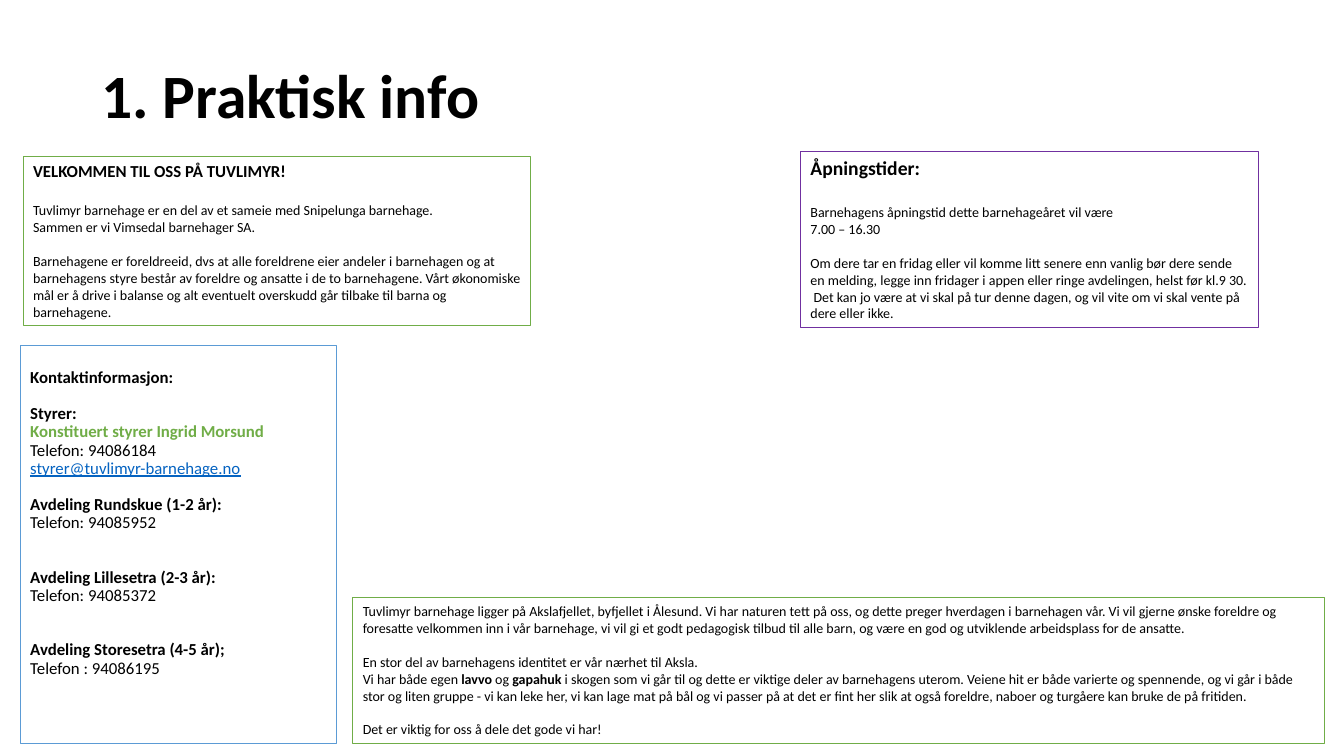
"""Build the practical information slide for a kindergarten."""
from dataclasses import dataclass

from pptx import Presentation
from pptx import util as u
from pptx.dml.color import RGBColor
from pptx.enum import text

COLORS = {
    "black": "000000",
    "white": "FFFFFF",
    "green": "70AD47",
    "blue": "5B9BD5",
    "purple": "7030A0",
    "link": "0563C1",
}
FONT = "Calibri"


@dataclass(frozen=True)
class Run:
    """A stretch of text in one format."""
    text: str
    size: float = 10
    bold: bool = False
    color: str = "black"
    underline: bool = False


@dataclass(frozen=True)
class Para:
    """Runs on one paragraph, with the gap above it in points."""
    runs: tuple[Run, ...]
    before: float = 0


@dataclass(frozen=True)
class Panel:
    """An outlined area of text, with lengths in inches."""
    left: float
    top: float
    width: float
    height: float
    line: str
    paras: tuple[Para, ...]
    spacing: float = 1.0
    inset_top: float = 0.05


def plain(words: str, before: float = 0) -> Para:
    """Return a paragraph of small body text."""
    return Para((Run(words),), before)


def heading(words: str, before: float = 0, size: float = 12, color: str = "black") -> Para:
    """Return a bold paragraph."""
    return Para((Run(words, size, True, color),), before)


def contact(words: str, color: str = "black", underline: bool = False) -> Para:
    """Return one line of contact details."""
    return Para((Run(words, 12, False, color, underline),))


def department(name: str, phone: str, before: float) -> tuple[Para, Para]:
    """Return the heading and phone line of a department."""
    return heading(name, before), contact(phone)


TITLE = Panel(-0.1, 0.22, 6.1, 1.14, "white",
              (heading("1. Praktisk info ", size=44),), 0.9)

CONTACTS = Panel(0.2, 3.43, 3.14, 3.95, "blue", (
    heading("Kontaktinformasjon:"),
    heading("Styrer:", 13),
    heading("Konstituert styrer Ingrid Morsund", color="green"),
    contact("Telefon: 94086184"),
    contact("styrer@tuvlimyr-barnehage.no", "link", True),
    *department("Avdeling Rundskue (1-2 år):", "Telefon: 94085952", 13),
    *department("Avdeling Lillesetra (2-3 år):", "Telefon: 94085372", 26),
    *department("Avdeling Storesetra (4-5 år);", "Telefon : 94086195", 26),
), 0.9, 0.23)

WELCOME = Panel(0.23, 1.55, 5.03, 1.68, "green", (
    heading("VELKOMMEN TIL OSS PÅ TUVLIMYR!"),
    plain("Tuvlimyr barnehage er en del av et sameie med Snipelunga barnehage.", 14.6),
    plain("Sammen er vi Vimsedal barnehager SA."),
    plain("Barnehagene er foreldreeid, dvs at alle foreldrene eier andeler i barnehagen "
          "og at barnehagens styre består av foreldre og ansatte i de to barnehagene. "
          "Vårt økonomiske mål er å drive i balanse og alt eventuelt overskudd går "
          "tilbake til barna og barnehagene.", 12.2),
))

HOURS = Panel(7.94, 1.5, 4.54, 1.75, "purple", (
    heading("Åpningstider:", size=14),
    plain("Barnehagens åpningstid dette barnehageåret vil være", 17.1),
    plain("7.00 – 16.30"),
    plain("Om dere tar en fridag eller vil komme litt senere enn vanlig bør dere sende "
          "en melding, legge inn fridager i appen eller ringe avdelingen, helst før "
          "kl.9 30.  Det kan jo være at vi skal på tur denne dagen, og vil vite om vi "
          "skal vente på dere eller ikke.", 12.2),
))

ABOUT = Panel(3.5, 5.93, 9.64, 1.45, "green", (
    plain("Tuvlimyr barnehage ligger på Akslafjellet, byfjellet i Ålesund. Vi har naturen "
          "tett på oss, og dette preger hverdagen i barnehagen vår. Vi vil gjerne ønske "
          "foreldre og foresatte velkommen inn i vår barnehage, vi vil gi et godt "
          "pedagogisk tilbud til alle barn, og være en god og utviklende arbeidsplass "
          "for de ansatte."),
    plain("En stor del av barnehagens identitet er vår nærhet til Aksla.", 12.2),
    Para((
        Run("Vi har både egen "),
        Run("lavvo", bold=True),
        Run(" og "),
        Run("gapahuk", bold=True),
        Run(" i skogen som vi går til og dette er viktige deler av barnehagens uterom. "
            "Veiene hit er både varierte og spennende, og vi går i både stor og liten "
            "gruppe - vi kan leke her, vi kan lage mat på bål og vi passer på at det er "
            "fint her slik at også foreldre, naboer og turgåere kan bruke de på fritiden."),
    )),
    plain("Det er viktig for oss å dele det gode vi har!", 12.2),
))


def rgb(name: str) -> RGBColor:
    """Return the named colour."""
    return RGBColor.from_string(COLORS[name])


def fill_panel(sp, panel: Panel, align=text.PP_ALIGN.LEFT, anchor=text.MSO_ANCHOR.TOP,
               auto_size=text.MSO_AUTO_SIZE.NONE) -> None:
    """Place, outline and fill a text shape."""
    sp.left, sp.top = u.Inches(panel.left), u.Inches(panel.top)
    sp.width, sp.height = u.Inches(panel.width), u.Inches(panel.height)
    sp.line.color.rgb = rgb(panel.line)
    sp.line.width = u.Pt(0.75)
    tf = sp.text_frame
    tf.word_wrap = True
    tf.auto_size = auto_size
    tf.vertical_anchor = anchor
    tf.margin_left = tf.margin_right = u.Inches(0.1)
    tf.margin_top, tf.margin_bottom = u.Inches(panel.inset_top), u.Inches(0.05)
    for i, para in enumerate(panel.paras):
        p = tf.add_paragraph() if i else tf.paragraphs[0]
        p.alignment = align
        p.line_spacing = panel.spacing
        p.space_before, p.space_after = u.Pt(para.before), u.Pt(0)
        for run in para.runs:
            r = p.add_run()
            r.text = run.text
            r.font.name, r.font.size = FONT, u.Pt(run.size)
            r.font.bold, r.font.underline = run.bold, run.underline
            r.font.color.rgb = rgb(run.color)


def main() -> None:
    """Build and save the slide."""
    prs = Presentation()
    prs.slide_width, prs.slide_height = u.Inches(13.33), u.Inches(7.5)
    s = prs.slides.add_slide(prs.slide_layouts[0])
    fill_panel(s.shapes.title, TITLE, text.PP_ALIGN.CENTER, text.MSO_ANCHOR.BOTTOM)
    fill_panel(s.placeholders[1], CONTACTS)
    for panel in (WELCOME, HOURS, ABOUT):
        sp = s.shapes.add_textbox(0, 0, 0, 0)
        fill_panel(sp, panel, auto_size=text.MSO_AUTO_SIZE.SHAPE_TO_FIT_TEXT)
    prs.save("out.pptx")


if __name__ == "__main__":
    main()
